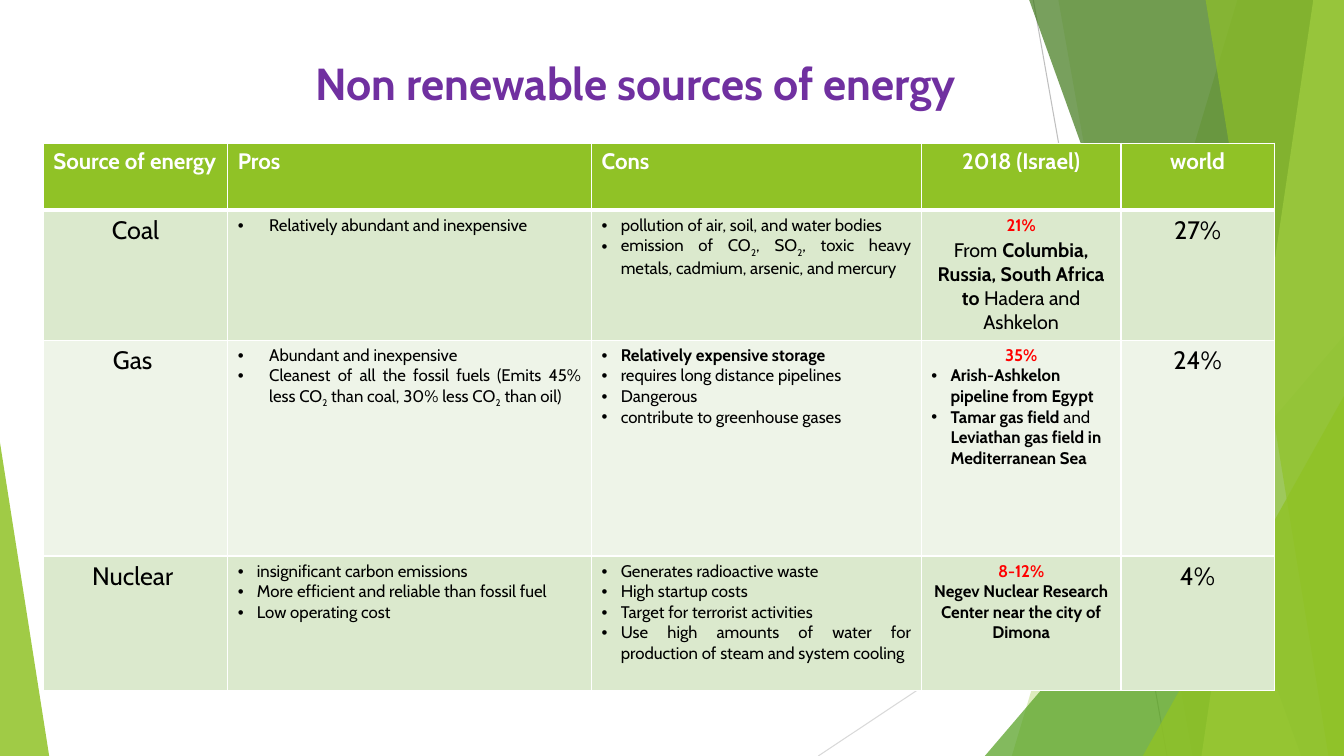
from dataclasses import dataclass

import lxml.etree
import pptx
import pptx.dml.color
import pptx.enum.shapes
import pptx.enum.text
import pptx.oxml
import pptx.oxml.ns
import pptx.util

Cm, Pt = pptx.util.Cm, pptx.util.Pt
RGB = pptx.dml.color.RGBColor.from_string
qn = pptx.oxml.ns.qn
ALIGN = pptx.enum.text.PP_ALIGN
LEFT, CENTER, JUSTIFY = ALIGN.LEFT, ALIGN.CENTER, ALIGN.JUSTIFY


@dataclass(frozen=True)
class Theme:
    font: str = "Cabin"
    lime: str = "90C226"
    leaf: str = "54A021"
    forest: str = "3F7819"
    pale_lime: str = "C0E474"
    white: str = "FFFFFF"
    black: str = "000000"
    red: str = "FF0000"
    purple: str = "7030A0"
    grey: str = "BFBFBF"
    light_grey: str = "D9D9D9"
    row_bands: tuple = ("DBE9CD", "EEF4E8")
    title: int = 32
    header: int = 16
    label: int = 18
    place: int = 14
    body: int = 12


theme = Theme()

# role: size, bold, colour
ROLES = {
    "title": (theme.title, True, theme.purple),
    "header": (theme.header, True, theme.white),
    "label": (theme.label, False, theme.black),
    "body": (theme.body, False, theme.black),
    "sub": (theme.body, False, theme.black),
    "strong": (theme.body, True, theme.black),
    "share": (theme.body, True, theme.red),
    "place": (theme.place, False, theme.black),
    "place_gap": (theme.header, False, theme.black),
    "place_strong": (theme.place, True, theme.black),
}


def write(text_frame, paragraphs):
    """Fill a frame from (alignment, bullet indent in cm, [(text, role), ...]) entries."""
    for number, (alignment, indent, runs) in enumerate(paragraphs):
        paragraph = text_frame.add_paragraph() if number else text_frame.paragraphs[0]
        paragraph.alignment = alignment
        if indent:
            properties = paragraph._p.get_or_add_pPr()
            properties.set("marL", str(Cm(indent)))
            properties.set("indent", str(-Cm(indent)))
            lxml.etree.SubElement(properties, qn("a:buFont"), typeface="Arial")
            lxml.etree.SubElement(properties, qn("a:buChar"), char="•")
        for text, role in runs:
            run = paragraph.add_run()
            run.text = text
            size, bold, color = ROLES[role]
            run.font.name = theme.font
            run.font.size = Pt(size)
            run.font.bold = bold
            run.font.color.rgb = RGB(color)
            if role == "sub":
                run.font._element.set("baseline", "-25000")


def bullets(alignment, indent, *lines):
    """Turn plain strings or run lists into bulleted paragraphs."""
    return [(alignment, indent, [(line, "body")] if isinstance(line, str) else line)
            for line in lines]


deck = pptx.Presentation()
deck.slide_width, deck.slide_height = Cm(33.87), Cm(19.05)
slide = deck.slides.add_slide(deck.slide_layouts[5])
RIGHT, BOTTOM = 33.87, 19.05

# Background rays and facets
for x1, y1, x2, y2, color in [(26.04, 0, 29.41, BOTTOM, theme.grey),
                              (RIGHT, 10.24, 20.62, BOTTOM, theme.light_grey)]:
    ray = slide.shapes.add_connector(pptx.enum.shapes.MSO_CONNECTOR.STRAIGHT,
                                     Cm(x1), Cm(y1), Cm(x2), Cm(y2))
    ray.line.color.rgb = RGB(color)
    ray.line.width = Pt(0.75)
    lxml.etree.SubElement(ray._element.spPr, qn("a:effectLst"))

# panel: top-left x, bottom-left x; triangle: left, top, width, apex
facets = [
    ("panel", (31.19, 25.5), theme.lime, 30),
    ("panel", (26.67, 30.05), theme.lime, 20),
    ("triangle", (24.82, 8.46, 9.05, 1), theme.leaf, 72),
    ("panel", (25.93, 32.79), theme.forest, 70),
    ("panel", (33.1, 30.28), theme.pale_lime, 70),
    ("panel", (30.38, 33.48), theme.lime, 65),
    ("triangle", (28.8, 9.98, 5.07, 1), theme.lime, 80),
    ("triangle", (0, 11.15, 1.24, 0), theme.lime, 85),
]
for outline, geometry, color, opacity in facets:
    if outline == "panel":
        top_x, bottom_x = geometry
        builder = slide.shapes.build_freeform(Cm(top_x), Cm(-0.02))
        builder.add_line_segments([(Cm(RIGHT), Cm(-0.02)), (Cm(RIGHT), Cm(BOTTOM)),
                                   (Cm(bottom_x), Cm(BOTTOM))], close=True)
        facet = builder.convert_to_shape()
    else:
        left, top, width, apex = geometry
        facet = slide.shapes.add_shape(pptx.enum.shapes.MSO_SHAPE.ISOSCELES_TRIANGLE,
                                       Cm(left), Cm(top), Cm(width), Cm(BOTTOM - top))
        facet.adjustments[0] = apex
    facet.shadow.inherit = False
    facet.line.fill.background()
    facet.fill.solid()
    facet.fill.fore_color.rgb = RGB(color)
    tint = facet._element.spPr.find(qn("a:solidFill"))[0]
    lxml.etree.SubElement(tint, qn("a:alpha"), val=str(opacity * 1000))

# Title
title = slide.shapes.title
title.left, title.top, title.width, title.height = Cm(6.27), Cm(1.27), Cm(19.51), Cm(1.63)
title.text_frame.word_wrap = True
title.text_frame.auto_size = pptx.enum.text.MSO_AUTO_SIZE.NONE
write(title.text_frame, [(CENTER, 0, [("Non renewable sources of energy", "title")])])

# Energy table
WIDE, NARROW = 0.79, 0.48
headers = [("Source of energy", LEFT), ("Pros", LEFT), ("Cons", LEFT),
           ("2018 (Israel)", CENTER), ("world", CENTER)]
sources = [
    ("Coal",
     bullets(LEFT, WIDE, "Relatively abundant and inexpensive"),
     bullets(JUSTIFY, NARROW, "pollution of air, soil, and water bodies",
             [("emission of CO", "body"), ("2", "sub"), (", SO", "body"), ("2", "sub"),
              (", toxic heavy metals, cadmium, arsenic, and mercury", "body")]),
     [(CENTER, 0, [("21%", "share")]),
      (CENTER, 0, [("From", "place"), (" ", "place_gap"),
                   ("Columbia, Russia, South Africa to ", "place_strong"),
                   ("Hadera and Ashkelon", "place")])],
     "27%"),
    ("Gas ",
     bullets(JUSTIFY, WIDE, "Abundant and inexpensive",
             [("Cleanest of all the fossil fuels (Emits 45% less CO", "body"), ("2", "sub"),
              (" than coal, 30% less CO", "body"), ("2", "sub"), (" than oil)", "body")]),
     bullets(JUSTIFY, NARROW, [("Relatively expensive storage", "strong")],
             "requires long distance pipelines", "Dangerous",
             "contribute to greenhouse gases"),
     [(CENTER, 0, [("35%", "share")])]
     + bullets(LEFT, NARROW, [("Arish-Ashkelon pipeline from Egypt", "strong")],
               [("Tamar gas field", "strong"), (" and ", "body"),
                ("Leviathan gas field in Mediterranean Sea", "strong")]),
     "24%"),
    ("Nuclear ",
     bullets(LEFT, NARROW, "insignificant carbon emissions",
             "More efficient and reliable than fossil fuel", "Low operating cost"),
     bullets(JUSTIFY, NARROW, "Generates radioactive waste", "High startup costs",
             "Target for terrorist activities",
             "Use high amounts of water for production of steam and system cooling"),
     [(CENTER, 0, [("8-12%", "share")]),
      (CENTER, 0, [("Negev Nuclear Research Center near the city of Dimona", "strong")])],
     "4%"),
]
rows = [[[(alignment, 0, [(text, "header")])] for text, alignment in headers]]
for source, pros, cons, israel, world in sources:
    rows.append([[(CENTER, 0, [(source, "label")])], pros, cons, israel,
                 [(CENTER, 0, [(world, "label")])]])

column_widths = [4.65, 9.17, 8.31, 5.03, 3.86]
row_heights = [1.68, 3.28, 5.44, 3.38]
energy = slide.shapes.add_table(len(rows), len(headers), Cm(1.09), Cm(3.61),
                                Cm(sum(column_widths)), Cm(sum(row_heights))).table
for column, width in zip(energy.columns, column_widths):
    column.width = Cm(width)
for row_number, (row, height) in enumerate(zip(rows, row_heights)):
    energy.rows[row_number].height = Cm(height)
    band = theme.row_bands[(row_number - 1) % 2] if row_number else theme.lime
    for column_number, paragraphs in enumerate(row):
        cell = energy.cell(row_number, column_number)
        write(cell.text_frame, paragraphs)
        cell.fill.solid()
        cell.fill.fore_color.rgb = RGB(band)
        for position, side in enumerate(["lnL", "lnR", "lnT", "lnB"]):
            under_header = (row_number, side) in [(0, "lnB"), (1, "lnT")]
            border = lxml.etree.Element(qn("a:" + side), w=str(Pt(3 if under_header else 1)))
            paint = lxml.etree.SubElement(border, qn("a:solidFill"))
            lxml.etree.SubElement(paint, qn("a:srgbClr"), val=theme.white)
            cell._tc.get_or_add_tcPr().insert(position, border)

deck.save("out.pptx")
